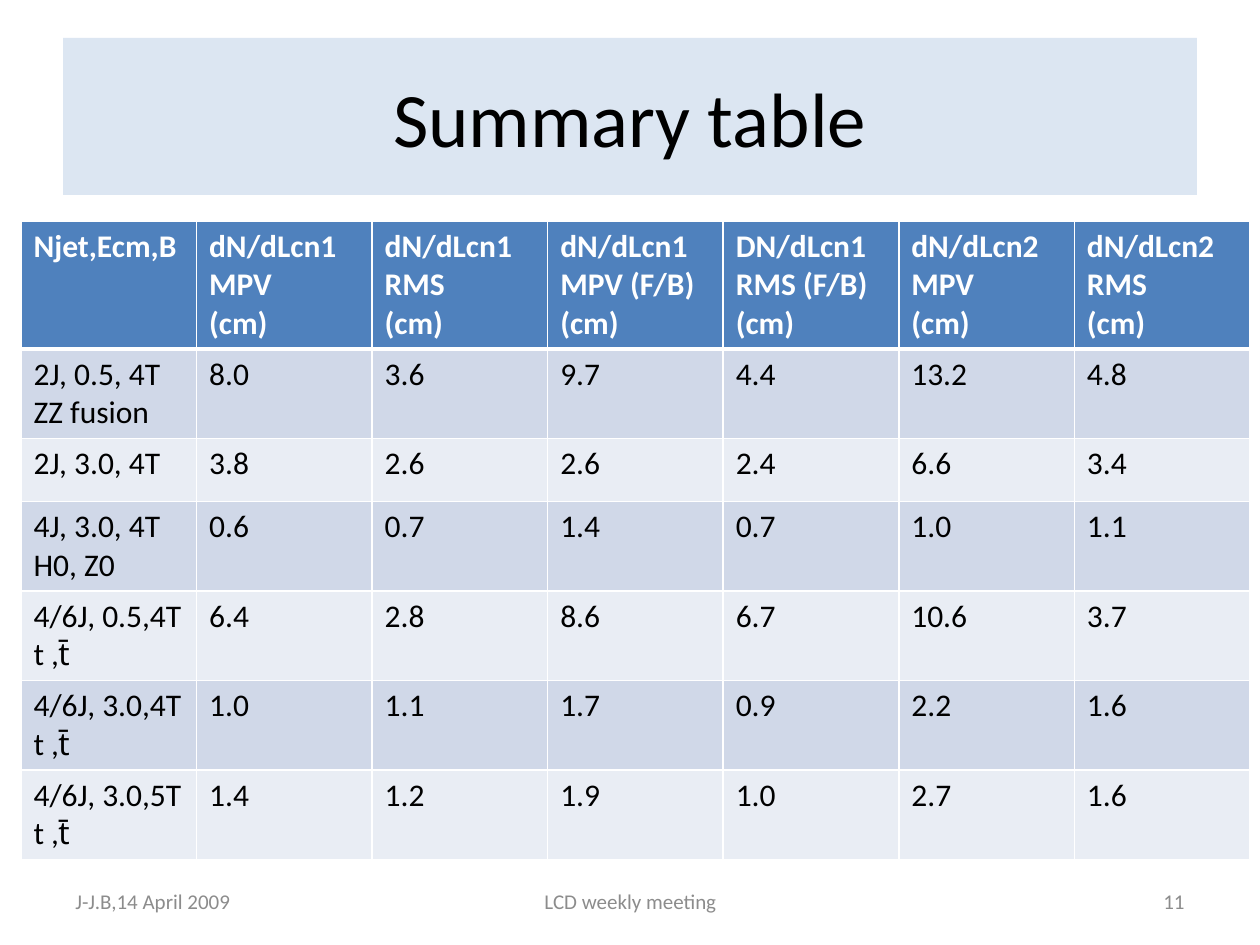
"""Build the summary table slide of jet separation results."""
from lxml import etree
from pptx import Presentation
from pptx.dml.color import RGBColor
from pptx.enum.text import MSO_ANCHOR, PP_ALIGN
from pptx.oxml.ns import qn
from pptx.util import Pt

PX = 914400 / 126
LEFT, CENTER, RIGHT = PP_ALIGN.LEFT, PP_ALIGN.CENTER, PP_ALIGN.RIGHT
MIDDLE = MSO_ANCHOR.MIDDLE
BLACK = RGBColor(0x00, 0x00, 0x00)
WHITE = RGBColor(0xFF, 0xFF, 0xFF)
GRAY = RGBColor(0x8C, 0x8C, 0x8C)
TITLE_FILL = RGBColor(0xDC, 0xE6, 0xF2)
HEADER_FILL = RGBColor(0x4F, 0x81, 0xBD)
BAND_FILLS = [RGBColor(0xE9, 0xED, 0xF4), RGBColor(0xD0, 0xD8, 0xE8)]

ROWS = [
    ["Njet,Ecm,B", "dN/dLcn1\nMPV\n(cm)", "dN/dLcn1\nRMS\n(cm)", "dN/dLcn1\nMPV (F/B)\n(cm)",
     "DN/dLcn1\nRMS (F/B)\n(cm)", "dN/dLcn2\nMPV\n(cm)", "dN/dLcn2\nRMS\n(cm)"],
    ["2J, 0.5, 4T\nZZ fusion", "8.0", "3.6", "9.7", "4.4", "13.2", "4.8"],
    ["2J, 3.0, 4T", "3.8", "2.6", "2.6", "2.4", "6.6", "3.4"],
    ["4J, 3.0, 4T\nH0, Z0", "0.6", "0.7", "1.4", "0.7", "1.0", "1.1"],
    ["4/6J, 0.5,4T\nt ,t̄", "6.4", "2.8", "8.6", "6.7", "10.6", "3.7"],
    ["4/6J, 3.0,4T\nt ,t̄", "1.0", "1.1", "1.7", "0.9", "2.2", "1.6"],
    ["4/6J, 3.0,5T\nt ,t̄", "1.4", "1.2", "1.9", "1.0", "2.7", "1.6"],
]
FOOTERS = [
    ("J-J.B,14 April 2009", 63, 294, LEFT),
    ("LCD weekly meeting", 431, 399, CENTER),
    ("11", 903, 294, RIGHT),
]


def write(frame, text, size, color, align=LEFT, bold=False):
    for index, line in enumerate(text.split("\n")):
        para = frame.add_paragraph() if index else frame.paragraphs[0]
        para.alignment = align
        span = para.add_run()
        span.text = line
        span.font.name = "Calibri"
        span.font.size = Pt(size)
        span.font.bold = bold
        span.font.color.rgb = color


def add_border(cell, side, width):
    properties = cell._tc.get_or_add_tcPr()
    line = etree.SubElement(properties, qn(f"a:{side}"), w=str(Pt(width)))
    fill = etree.SubElement(line, qn("a:solidFill"))
    etree.SubElement(fill, qn("a:srgbClr"), val=str(WHITE))


deck = Presentation()
deck.slide_width = round(1260 * PX)
deck.slide_height = round(945 * PX)
page = deck.slides.add_slide(deck.slide_layouts[5])

title = page.shapes.title
title.left, title.top, title.width, title.height = [round(n * PX) for n in (63, 38, 1134, 157)]
title.fill.solid()
title.fill.fore_color.rgb = TITLE_FILL
title.text_frame.vertical_anchor = MIDDLE
write(title.text_frame, "Summary table", 44, BLACK, CENTER)

table_frame = page.shapes.add_table(
    len(ROWS), len(ROWS[0]), *[round(n * PX) for n in (21, 221, 1229, 441)])
table = table_frame.table
for row_index, row in enumerate(ROWS):
    header = row_index == 0
    for column_index, text in enumerate(row):
        cell = table.cell(row_index, column_index)
        write(cell.text_frame, text, 18, WHITE if header else BLACK, bold=header)
        for side in ("lnL", "lnR", "lnT", "lnB"):
            thick = (header and side == "lnB") or (row_index == 1 and side == "lnT")
            add_border(cell, side, 3 if thick else 1)
        cell.fill.solid()
        cell.fill.fore_color.rgb = HEADER_FILL if header else BAND_FILLS[row_index % 2]

for text, left, width, align in FOOTERS:
    box = page.shapes.add_textbox(*[round(n * PX) for n in (left, 876, width, 50)])
    box.text_frame.word_wrap = True
    box.text_frame.vertical_anchor = MIDDLE
    write(box.text_frame, text, 12, GRAY, align)

deck.save("out.pptx")
